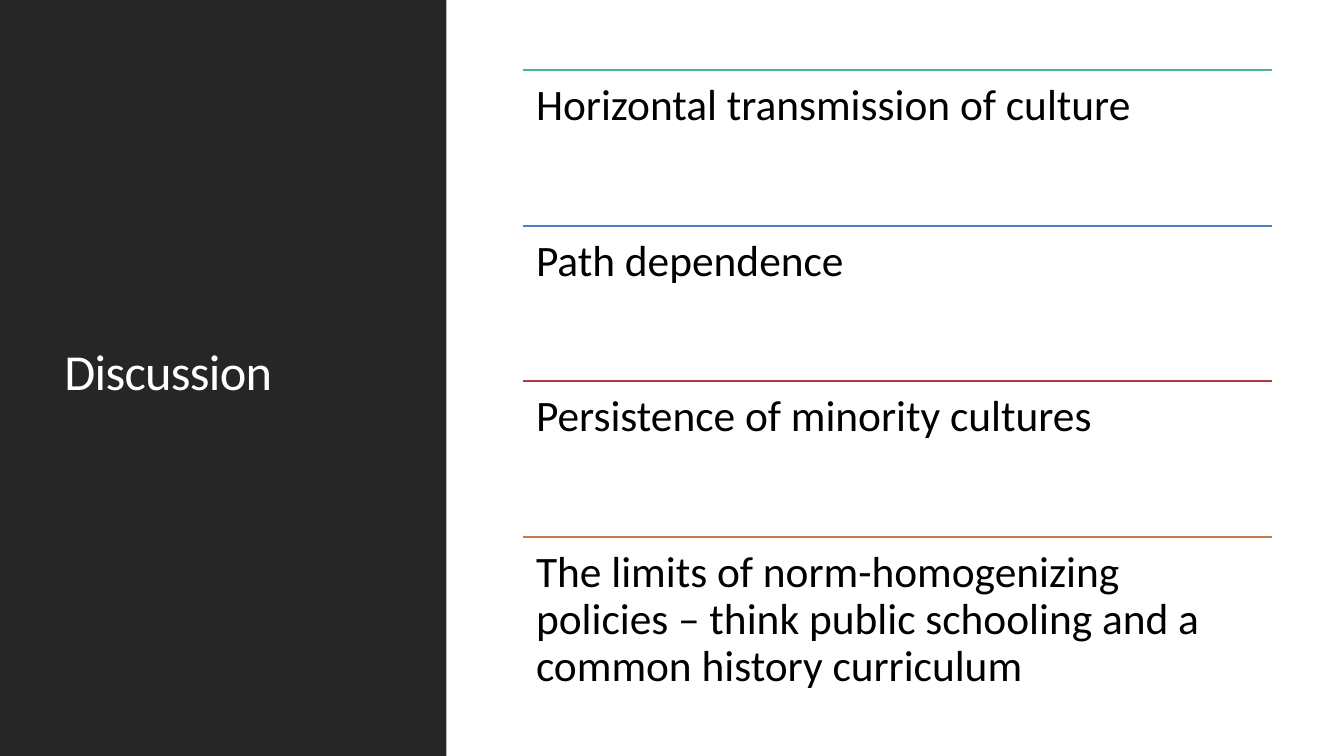
from lxml import etree
from pptx import Presentation
from pptx import util as u
from pptx.dml.color import RGBColor
from pptx.enum import shapes, text
from pptx.oxml.ns import qn

FONT = "Calibri"
DARK = "262626"
TOPICS = [
    ("Horizontal transmission of culture", "46B196"),
    ("Path dependence", "4D7EC3"),
    ("Persistence of minority cultures", "B13B3E"),
    ("The limits of norm-homogenizing policies – think public schooling "
     "and a common history curriculum", "C37B4D"),
]
TOPIC_LEFT, TOPIC_TOP = u.Cm(13.18), u.Cm(1.77)
TOPIC_WIDTH, TOPIC_HEIGHT = u.Cm(18.87), u.Cm(3.92)


def colour(value):
    return RGBColor.from_string(value)


def format_text(frame, size, shade, spacing):
    frame.word_wrap = True
    frame.auto_size = text.MSO_AUTO_SIZE.NONE
    para = frame.paragraphs[0]
    para.alignment = text.PP_ALIGN.LEFT
    para.line_spacing = spacing
    span = para.runs[0]
    span.font.name = FONT
    span.font.size = u.Pt(size)
    span.font.color.rgb = colour(shade)
    return span


def add_panel(page, width, height):
    panel = page.shapes.add_shape(shapes.MSO_SHAPE.RECTANGLE, 0, 0, width, height)
    panel.shadow.inherit = False
    panel.fill.solid()
    panel.fill.fore_color.rgb = colour(DARK)
    panel.line.fill.background()
    return panel


def set_title(page, wording, panel):
    title = page.shapes.title
    title.left, title.top = u.Cm(1.37), u.Cm(1.45)
    title.width, title.height = u.Cm(8.56), u.Cm(16.03)
    frame = title.text_frame
    frame.text = wording
    frame.vertical_anchor = text.MSO_ANCHOR.MIDDLE
    span = format_text(frame, 36, "FFFFFF", 0.8)
    span.font.element.set("spc", "-50") if hasattr(span.font, "element") else \
        span._r.get_or_add_rPr().set("spc", "-50")
    panel.element.addnext(title.element)


def add_rule(page, top, shade):
    rule = page.shapes.add_connector(
        shapes.MSO_CONNECTOR.STRAIGHT, TOPIC_LEFT, top, TOPIC_LEFT + TOPIC_WIDTH, top)
    rule.line.color.rgb = colour(shade)
    rule.line.width = u.Pt(1.25)
    etree.SubElement(rule.element.spPr, qn("a:effectLst"))


def add_topic(page, top, wording):
    box = page.shapes.add_textbox(TOPIC_LEFT, top, TOPIC_WIDTH, TOPIC_HEIGHT)
    frame = box.text_frame
    frame.text = wording
    frame.margin_left = frame.margin_right = u.Cm(0.33)
    frame.margin_top = frame.margin_bottom = u.Cm(0.33)
    frame.vertical_anchor = text.MSO_ANCHOR.TOP
    format_text(frame, 31, "000000", 0.9)


def main():
    deck = Presentation()
    deck.slide_width, deck.slide_height = u.Cm(33.87), u.Cm(19.05)
    page = deck.slides.add_slide(deck.slide_layouts[5])
    panel = add_panel(page, u.Cm(11.25), deck.slide_height)
    set_title(page, "Discussion", panel)
    for index, (wording, shade) in enumerate(TOPICS):
        top = TOPIC_TOP + index * TOPIC_HEIGHT
        add_rule(page, top, shade)
        add_topic(page, top, wording)
    deck.save("out.pptx")


if __name__ == "__main__":
    main()
